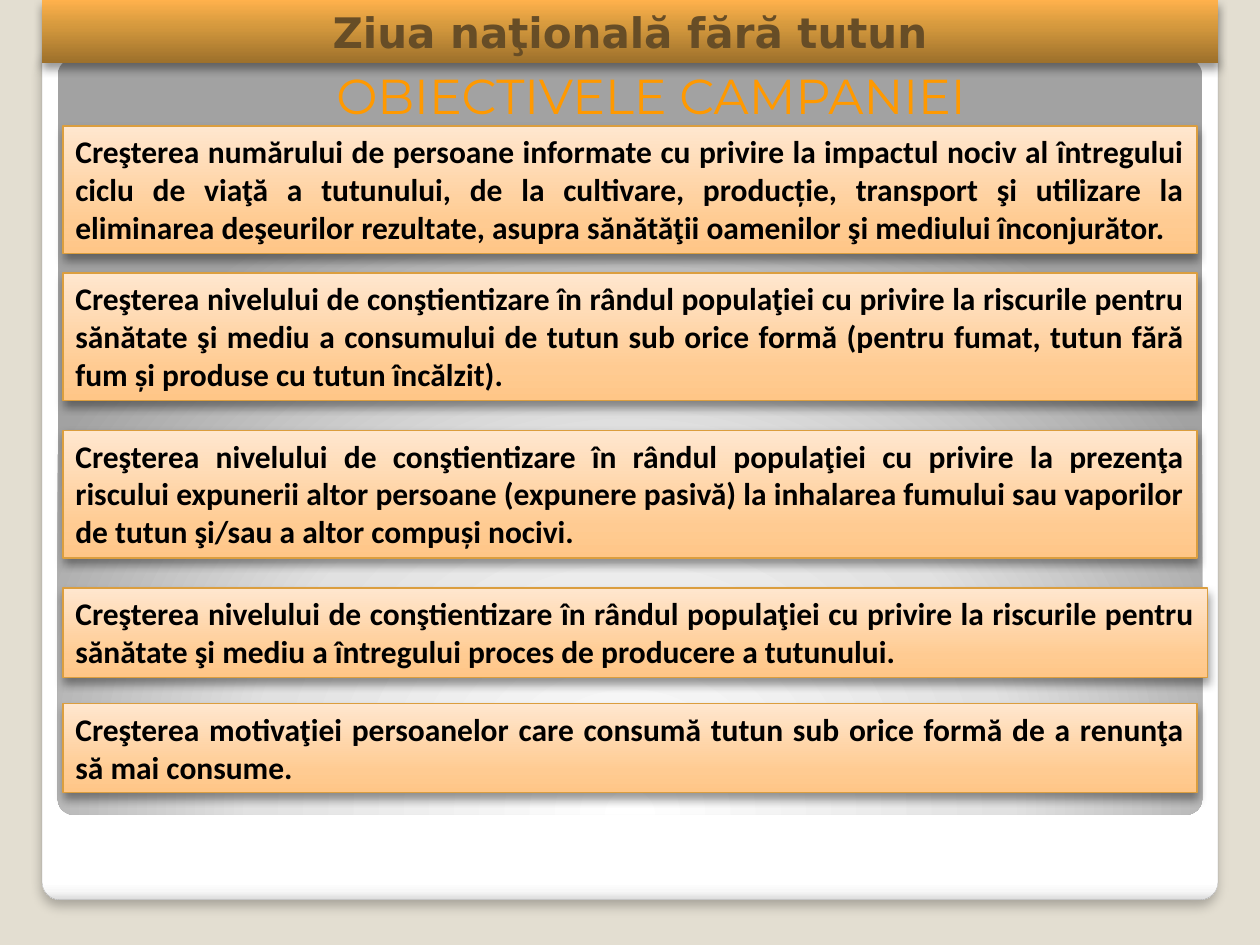
from pptx import Presentation, util as u
from pptx.dml.color import RGBColor
from pptx.enum import shapes, text
from pptx.oxml import parse_xml
from pptx.oxml.ns import nsdecls, qn

CELL = u.Inches(1) / 12
SAND = RGBColor(0xE3, 0xDE, 0xD1)
WHITE = RGBColor(0xFF, 0xFF, 0xFF)
MIST = RGBColor(0xF7, 0xF7, 0xF7)
SILVER = RGBColor(0xDA, 0xDA, 0xDA)
PEARL = RGBColor(0xE1, 0xE1, 0xE1)
GREY = RGBColor(0xA2, 0xA2, 0xA2)
EDGE = RGBColor(0xA4, 0xA4, 0xA4)
BRONZE = RGBColor(0x9D, 0x70, 0x2B)
GOLD = RGBColor(0xD6, 0x9A, 0x3E)
AMBER = RGBColor(0xFF, 0xB1, 0x4C)
APRICOT = RGBColor(0xFF, 0xC6, 0x87)
PEACH = RGBColor(0xFF, 0xCB, 0x92)
CREAM = RGBColor(0xFF, 0xE7, 0xCF)
OCHRE = RGBColor(0xDB, 0x9E, 0x3F)
ORANGE = RGBColor(0xFF, 0x99, 0x00)
BROWN = RGBColor(0x67, 0x4D, 0x26)
BLACK = RGBColor(0, 0, 0)

CARD_STOPS = [(0, WHITE), (98, WHITE), (99, MIST), (100, SILVER)]
PANEL_STOPS = [(0, WHITE), (55, PEARL), (100, GREY)]
BANNER_STOPS = [(0, BRONZE), (60, GOLD), (100, AMBER)]
OBJECTIVE_STOPS = [(0, APRICOT), (25, PEACH), (100, CREAM)]
DOWNWARD = '<a:lin ang="5400000" scaled="0"/>'
UPWARD = '<a:lin ang="16200000" scaled="0"/>'
FROM_BELOW = ('<a:path path="circle"><a:fillToRect l="50000" t="175000" '
              'r="50000" b="-75000"/></a:path>')
SOFT_SHADOW = (25, 6, 4)
BOX_SHADOW = (40, 5.2, 3)

OBJECTIVES = [
    (12, 108, 3, "Creşterea numărului de persoane informate cu privire la impactul nociv "
     "al întregului ciclu de viaţă a tutunului, de la cultivare, producție, transport şi "
     "utilizare la eliminarea deşeurilor rezultate, asupra sănătăţii oamenilor şi "
     "mediului înconjurător."),
    (26, 108, 3, "Creşterea nivelului de conştientizare în rândul populaţiei cu privire la "
     "riscurile pentru sănătate şi mediu a consumului de tutun sub orice formă (pentru "
     "fumat, tutun fără fum și produse cu tutun încălzit)."),
    (41, 108, 3, "Creşterea nivelului de conştientizare în rândul populaţiei cu privire la "
     "prezenţa riscului expunerii altor persoane (expunere pasivă) la inhalarea fumului "
     "sau vaporilor de tutun şi/sau a altor compuși nocivi."),
    (56, 109, 2, "Creşterea nivelului de conştientizare în rândul populaţiei cu privire la "
     "riscurile pentru sănătate şi mediu a întregului proces de producere a tutunului."),
    (67, 108, 2, "Creşterea motivaţiei persoanelor care consumă tutun sub orice formă de a "
     "renunţa să mai consume."),
]


def apply(target, values):
    """Set every attribute named in values on target."""
    for name, value in values.items():
        setattr(target, name, value)


def to_emu(box):
    """Turn a box in grid columns and rows into slide lengths."""
    return [u.Emu(round(part * CELL)) for part in box]


def add_block(slide, kind, box, stops, direction, line=None, shadow=None):
    """Add a gradient shape with an optional outline and downward shadow."""
    shape = slide.shapes.add_shape(kind, *to_emu(box))
    shape.fill.gradient()
    properties = shape.fill._xPr
    marks = "".join(f'<a:gs pos="{place * 1000}"><a:srgbClr val="{color}"/></a:gs>'
                    for place, color in stops)
    properties.replace(properties.find(qn("a:gradFill")), parse_xml(
        f'<a:gradFill rotWithShape="1" {nsdecls("a")}><a:gsLst>{marks}</a:gsLst>'
        f'{direction}</a:gradFill>'))
    shape.shadow.inherit = False
    if line:
        shape.line.color.rgb, shape.line.width = line[0], u.Pt(line[1])
    else:
        shape.line.fill.background()
    if shadow:
        alpha, blur, distance = shadow
        properties.find(qn("a:effectLst")).append(parse_xml(
            f'<a:outerShdw blurRad="{u.Pt(blur)}" dist="{u.Pt(distance)}" dir="5400000" '
            f'rotWithShape="0" {nsdecls("a")}><a:srgbClr val="000000">'
            f'<a:alpha val="{alpha * 1000}"/></a:srgbClr></a:outerShdw>'))
    return shape


def write(shape, words, align, color, font, frame=None):
    """Write one paragraph with the given frame and font values."""
    apply(shape.text_frame, {"word_wrap": True, "vertical_anchor": text.MSO_ANCHOR.TOP,
                             **(frame or {"auto_size": text.MSO_AUTO_SIZE.SHAPE_TO_FIT_TEXT})})
    paragraph = shape.text_frame.paragraphs[0]
    paragraph.alignment = align
    run = paragraph.add_run()
    run.text = words
    apply(run.font, font)
    run.font.color.rgb = color
    return paragraph


def add_backdrop(slide, card_box, panel_box):
    """Place the white card and the grey panel on it."""
    rounded = shapes.MSO_SHAPE.ROUNDED_RECTANGLE
    card = add_block(slide, rounded, card_box, CARD_STOPS, DOWNWARD, (EDGE, 0.16), SOFT_SHADOW)
    panel = add_block(slide, rounded, panel_box, PANEL_STOPS, FROM_BELOW)
    for shape in (card, panel):
        shape.adjustments[0] = 0.021


def add_heading(slide, box):
    """Place the heading of the campaign goals."""
    heading = slide.shapes.add_textbox(*to_emu(box))
    insets = {"margin_left": u.Inches(0.2), "margin_top": u.Inches(0.1),
              "margin_right": u.Inches(0.1), "margin_bottom": u.Inches(0.05)}
    paragraph = write(heading, "OBIECTIVELE CAMPANIEI ", text.PP_ALIGN.CENTER, ORANGE,
                      {"name": "Montserrat", "size": u.Pt(28)}, insets)
    paragraph.space_before = u.Pt(2.5)
    indent = u.Inches(0.29)
    for name, value in {"marL": indent, "indent": -indent}.items():
        paragraph._p.get_or_add_pPr().set(name, str(value))


def add_banner(slide, box):
    """Place the banner with the name of the day."""
    banner = add_block(slide, shapes.MSO_SHAPE.RECTANGLE, box, BANNER_STOPS, UPWARD,
                       shadow=BOX_SHADOW)
    write(banner, "Ziua naţională fără tutun", text.PP_ALIGN.CENTER, BROWN,
          {"name": "DejaVu Sans", "size": u.Pt(24), "bold": True})


def add_objective(slide, box, words):
    """Place one objective in its box."""
    objective = add_block(slide, shapes.MSO_SHAPE.RECTANGLE, box, OBJECTIVE_STOPS, UPWARD,
                          (OCHRE, 0.75), BOX_SHADOW)
    write(objective, words, text.PP_ALIGN.JUSTIFY, BLACK,
          {"name": "Calibri", "size": u.Pt(18), "bold": True})


def main():
    """Build and save the slide."""
    presentation = Presentation()
    apply(presentation, {"slide_width": u.Inches(10), "slide_height": u.Inches(7.5)})
    slide = presentation.slides.add_slide(presentation.slide_layouts[6])
    slide.background.fill.solid()
    slide.background.fill.fore_color.rgb = SAND
    add_backdrop(slide, (4, 4.3, 112, 81.4), (5.5, 5.6, 109, 72))
    add_heading(slide, (17, 5, 90, 8))
    add_banner(slide, (4, 0, 112, 6))
    for row, columns, lines, words in OBJECTIVES:
        add_objective(slide, (6, row, columns, 1.2 + 3.65 * lines), words)
    presentation.save("out.pptx")


if __name__ == "__main__":
    main()
